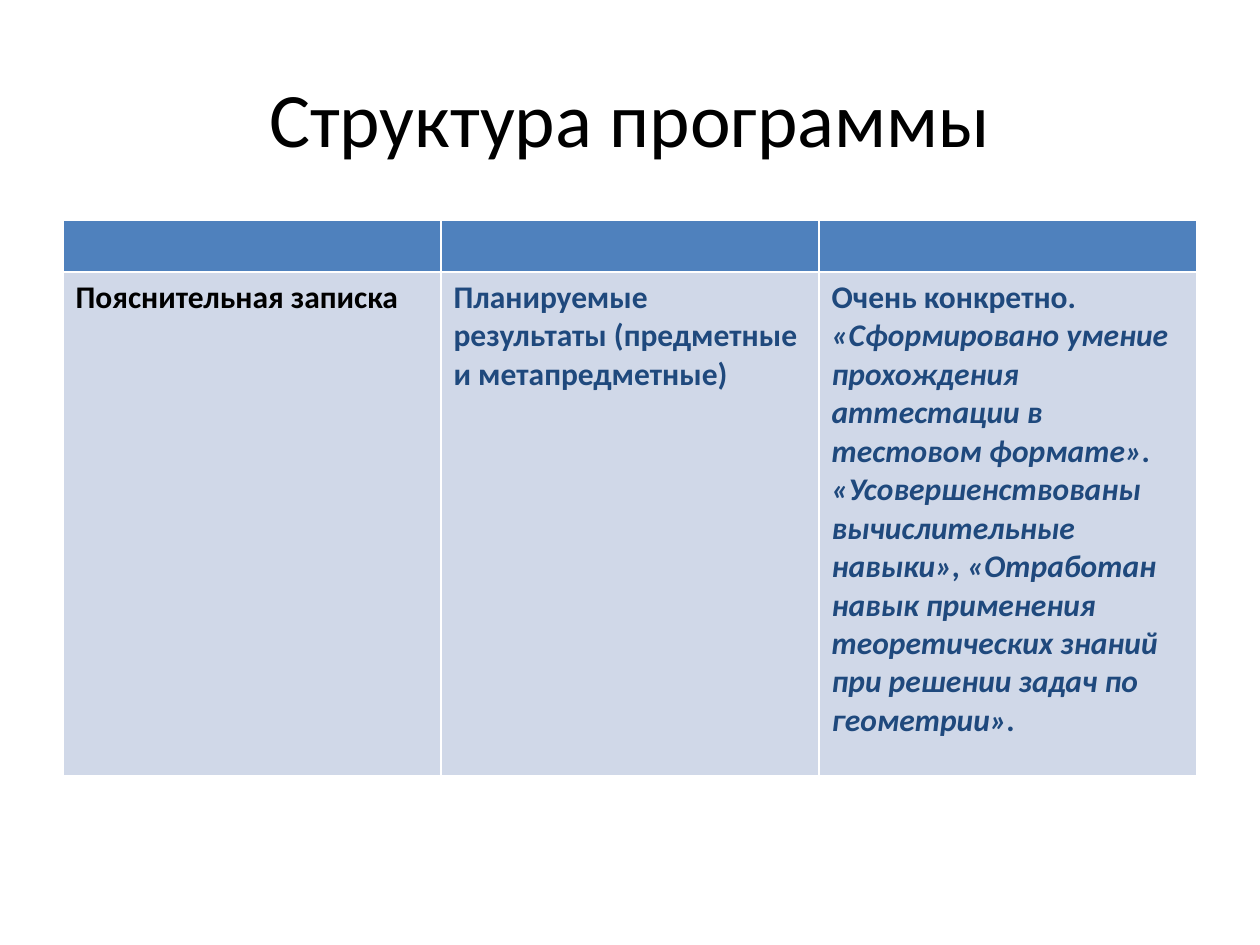
from pptx import Presentation
from pptx.dml.color import RGBColor
from pptx.enum.text import MSO_ANCHOR, PP_ALIGN
from pptx.util import Inches, Pt

TITLE = "Структура программы"
BLACK, NAVY = "000000", "1F497D"
HEADER_FILL, BODY_FILL = "4F81BD", "D0D8E8"
CELLS = [
    [("Пояснительная записка", {"color": BLACK})],
    [("Планируемые результаты (предметные и метапредметные)", {"color": NAVY})],
    [
        ("Очень конкретно. ", {"color": NAVY}),
        ("«Сформировано умение прохождения аттестации в тестовом формате». "
         "«Усовершенствованы вычислительные навыки», «Отработан навык применения "
         "теоретических знаний при решении задач по геометрии».",
         {"color": NAVY, "italic": True}),
    ],
]
LEFT, WIDTH = 0.5, 9
TABLE_TOP, ROW_HEIGHTS = 1.75, (0.41, 4)


def rgb(value):
    return RGBColor.from_string(value)


def add_text(p, text, size=18, color=BLACK, bold=True, italic=False):
    r = p.add_run()
    r.text = text
    r.font.name = "Calibri"
    r.font.size = Pt(size)
    r.font.bold = bold
    r.font.italic = italic
    r.font.color.rgb = rgb(color)


def fill_cell(cell, color):
    cell.fill.solid()
    cell.fill.fore_color.rgb = rgb(color)


def add_title(s):
    sp = s.shapes.title
    sp.left, sp.top = Inches(LEFT), Inches(0.3)
    sp.width, sp.height = Inches(WIDTH), Inches(1.25)
    tf = sp.text_frame
    tf.vertical_anchor = MSO_ANCHOR.MIDDLE
    p = tf.paragraphs[0]
    p.alignment = PP_ALIGN.CENTER
    add_text(p, TITLE, size=44, bold=False)


def add_structure_table(s):
    table = s.shapes.add_table(
        len(ROW_HEIGHTS), len(CELLS), Inches(LEFT), Inches(TABLE_TOP),
        Inches(WIDTH), Inches(sum(ROW_HEIGHTS))).table
    for row, height in zip(table.rows, ROW_HEIGHTS):
        row.height = Inches(height)
    for col, runs in enumerate(CELLS):
        fill_cell(table.cell(0, col), HEADER_FILL)
        cell = table.cell(1, col)
        fill_cell(cell, BODY_FILL)
        for text, style in runs:
            add_text(cell.text_frame.paragraphs[0], text, **style)


def main():
    prs = Presentation()
    prs.slide_width, prs.slide_height = Inches(10), Inches(7.5)
    s = prs.slides.add_slide(prs.slide_layouts[5])
    add_title(s)
    add_structure_table(s)
    prs.save("out.pptx")


if __name__ == "__main__":
    main()
